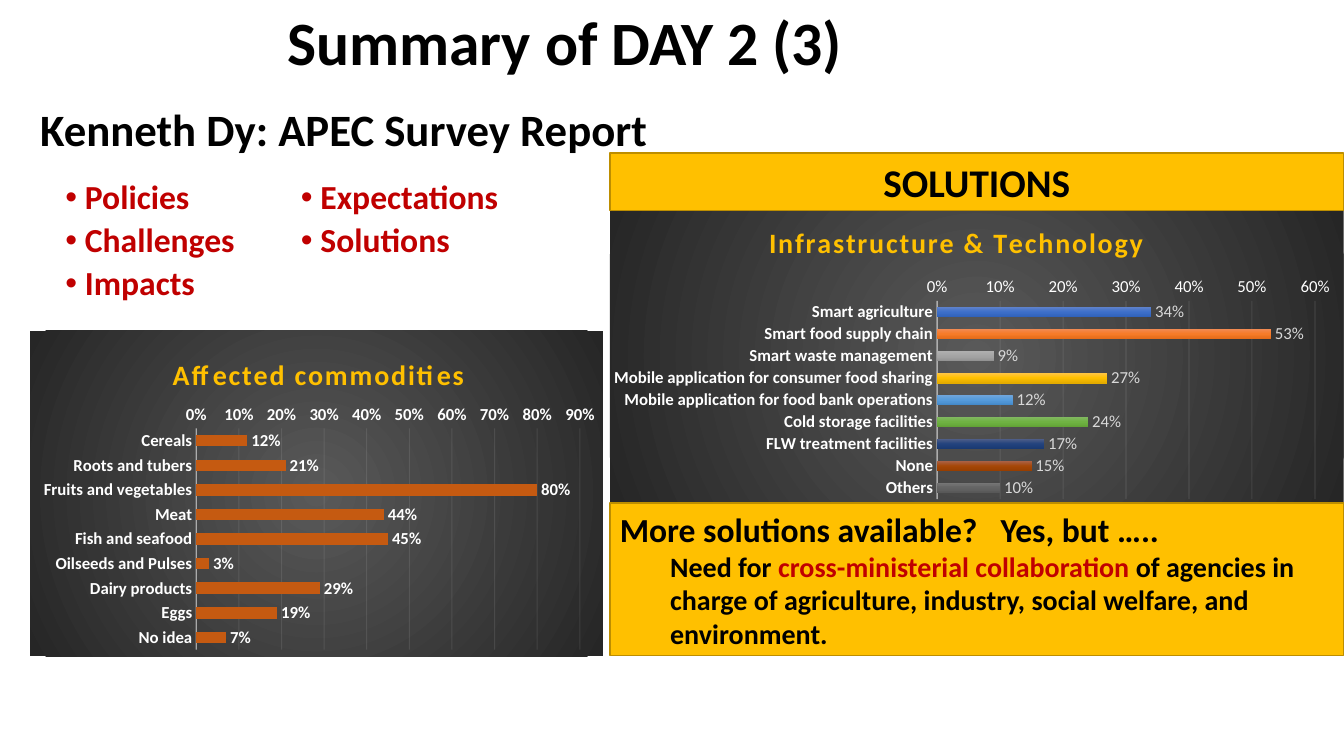
import pptx
import pptx.chart.data
import pptx.dml.color
import pptx.enum.chart
import pptx.enum.shapes
import pptx.enum.text
import pptx.oxml
import pptx.oxml.ns
import pptx.util

Pt = pptx.util.Pt
RGB = pptx.dml.color.RGBColor
PP_ALIGN = pptx.enum.text.PP_ALIGN
ANCHOR = pptx.enum.text.MSO_ANCHOR
qn = pptx.oxml.ns.qn

BLACK, WHITE = RGB(0, 0, 0), RGB(255, 255, 255)
RED, AMBER = RGB(0xC0, 0, 0), RGB(0xFF, 0xC0, 0)
AMBER_EDGE, ORANGE = RGB(0xBD, 0x8E, 0), RGB(0xC5, 0x5A, 0x11)
AXIS_GREY, LABEL_GREY = RGB(0xF2, 0xF2, 0xF2), RGB(0xD9, 0xD9, 0xD9)
FONT = "Calibri"

# Content
TITLE = "Summary of DAY 2 (3)"
SUBTITLE = "Kenneth Dy: APEC Survey Report"
TOPICS = ["Policies", "Challenges", "Impacts", "Expectations", "Solutions"]
SOLUTIONS = "SOLUTIONS"
QUESTION = "More solutions available?\tYes, but ….."
NEED = [("Need for ", BLACK), ("cross-ministerial collaboration ", RED),
        ("of agencies in charge of agriculture, industry, social welfare, "
         "and environment.", BLACK)]

COMMODITIES = {
    "title": "Affected commodities",
    "values": {"Cereals": 0.12, "Roots and tubers": 0.21, "Fruits and vegetables": 0.8,
               "Meat": 0.44, "Fish and seafood": 0.45, "Oilseeds and Pulses": 0.03,
               "Dairy products": 0.29, "Eggs": 0.19, "No idea": 0.07},
    "max": 0.9, "bold": True, "label": WHITE, "bars": [],
    "box": (21.6, 236.2, 409, 232.6),
    "title_at": (0.24, 0.06), "plot": (0.29, 0.3, 0.67, 0.68),
}
TECHNOLOGY = {
    "title": "Infrastructure & Technology",
    "values": {"Smart agriculture": 0.34, "Smart food supply chain": 0.53,
               "Smart waste management": 0.09,
               "Mobile application for consumer food sharing": 0.27,
               "Mobile application for food bank operations": 0.12,
               "Cold storage facilities": 0.24, "FLW treatment facilities": 0.17,
               "None": 0.15, "Others": 0.1},
    "max": 0.6, "bold": False, "label": LABEL_GREY,
    "bars": ["6183CB 3E70CA 3062BB", "F18C57 F67B28 E56C19", "AFAFAF A5A5A5 939393",
             "FFC64B FFC000 E3AB00", "71A6DB 559BDB 448ACA", "81B861 6FB242 62A336",
             "516089 22427D 1A3A72", "AB634B A54707 983E00", "777777 636363 585858"],
    "box": (435.6, 146.9, 524.2, 214.6),
    "title_at": (0.21, 0.04), "plot": (0.446, 0.317, 0.515, 0.66),
}


def style(font, size, color, bold=True):
    font.name, font.size, font.bold = FONT, Pt(size), bold
    font.color.rgb = color


def box(*lengths):
    return [Pt(length) for length in lengths]


def xml(tag, inner="", attrs=""):
    return pptx.oxml.parse_xml(
        f'<{tag} {pptx.oxml.ns.nsdecls("a", "c")} {attrs}>{inner}</{tag}>')


def gradient(colors, direction):
    step = 100000 // (len(colors) - 1)
    stops = "".join(f'<a:gs pos="{i * step}"><a:srgbClr val="{color}"/></a:gs>'
                    for i, color in enumerate(colors))
    return xml("a:gradFill", f"<a:gsLst>{stops}</a:gsLst>{direction}", 'rotWithShape="1"')


def layout(target, **fractions):
    modes = "".join(f'<c:{k}Mode val="edge"/>' for k in fractions if k in "xy")
    sizes = "".join(f'<c:{k} val="{v}"/>' for k, v in fractions.items())
    return xml("c:layout", f"<c:manualLayout>{target}{modes}{sizes}</c:manualLayout>")


def set_layout(parent, new, before=None):
    for old in parent.findall(qn("c:layout")):
        parent.remove(old)
    if before is None:
        parent.insert(0, new)
    else:
        before.addnext(new)


def faint_line(line, width, opacity):
    line.width = Pt(width)
    line.color.rgb = AXIS_GREY
    color = line._ln.find(".//" + qn("a:srgbClr"))
    color.append(xml("a:alpha", attrs=f'val="{opacity * 1000}"'))


def add_bar_chart(slide, info):
    data = pptx.chart.data.CategoryChartData(number_format="0%")
    data.categories = list(info["values"])
    data.add_series("Series 1", list(info["values"].values()))
    chart = slide.shapes.add_chart(pptx.enum.chart.XL_CHART_TYPE.BAR_CLUSTERED,
                                   *box(*info["box"]), data).chart
    style(chart.font, 10, WHITE, info["bold"])
    chart.has_legend = False

    # Dark background
    background = xml("c:spPr")
    background.append(gradient(["595959", "262626"],
                               '<a:path path="circle"><a:fillToRect l="50000" t="50000" '
                               'r="50000" b="50000"/></a:path>'))
    background.append(xml("a:ln", "<a:noFill/>"))
    chart._chartSpace.find(qn("c:chart")).addnext(background)

    # Chart title
    heading = chart.chart_title
    heading.text_frame.text = info["title"]
    run = heading.text_frame.paragraphs[0].runs[0]
    style(run.font, 20, AMBER)
    run._r.get_or_add_rPr().set("spc", "120")
    x, y = info["title_at"]
    set_layout(heading._element, layout("", x=x, y=y), heading._element.find(qn("c:tx")))
    heading.include_in_layout = False
    x, y, w, h = info["plot"]
    set_layout(chart._chartSpace.find(".//" + qn("c:plotArea")),
               layout('<c:layoutTarget val="inner"/>', x=x, y=y, w=w, h=h))

    # Axes
    categories, percent = chart.category_axis, chart.value_axis
    for axis, bold in ((categories, True), (percent, info["bold"])):
        axis.major_tick_mark = axis.minor_tick_mark = pptx.enum.chart.XL_TICK_MARK.NONE
        style(axis.tick_labels.font, 12, WHITE, bold)
    categories.reverse_order = True
    faint_line(categories.format.line, 1, 54)
    percent.minimum_scale, percent.maximum_scale = 0, info["max"]
    percent.major_unit = 0.1
    percent.format.line.fill.background()
    percent.tick_labels.number_format = "0%"
    percent.tick_labels.number_format_is_linked = False
    faint_line(percent.major_gridlines.format.line, 0.75, 10)

    # Bars and their labels
    plot = chart.plots[0]
    plot.gap_width, plot.overlap, plot.vary_by_categories = 115, -20, False
    bars = plot.series[0]
    bars.invert_if_negative = False
    bars.format.fill.solid()
    bars.format.fill.fore_color.rgb = ORANGE
    for i, colors in enumerate(info["bars"]):
        point = bars._element.get_or_add_dPt_for_point(i)
        point.get_or_add_spPr().append(
            gradient(colors.split(), '<a:lin ang="5400000" scaled="0"/>'))
    plot.has_data_labels = True
    labels = plot.data_labels
    labels.show_value = True
    labels.number_format, labels.number_format_is_linked = "0%", False
    labels.position = pptx.enum.chart.XL_LABEL_POSITION.OUTSIDE_END
    style(labels.font, 12, info["label"], info["bold"])


def add_amber_panel(slide, top, height):
    panel = slide.shapes.add_shape(pptx.enum.shapes.MSO_SHAPE.RECTANGLE,
                                   *box(435.6, top, 524.2, height))
    panel.shadow.inherit = False
    panel.fill.solid()
    panel.fill.fore_color.rgb = AMBER
    panel.line.color.rgb = AMBER_EDGE
    panel.line.width = Pt(1)
    panel.text_frame.word_wrap = True
    panel.text_frame.vertical_anchor = ANCHOR.MIDDLE
    return panel.text_frame


deck = pptx.Presentation()
deck.slide_width, deck.slide_height = Pt(960), Pt(540)
slide = deck.slides.add_slide(deck.slide_layouts[5])

# Title and subtitle
title = slide.shapes.title
title.left, title.top, title.width, title.height = box(198, -18.7, 828, 102.2)
subtitle = slide.shapes.add_textbox(*box(21.6, 73.4, 828, 44.6))
for shape, text, size in ((title, TITLE, 44), (subtitle, SUBTITLE, 32)):
    shape.text_frame.text = text
    shape.text_frame.word_wrap = True
    line = shape.text_frame.paragraphs[0]
    line.alignment, line.line_spacing = PP_ALIGN.LEFT, 0.9
    style(line.runs[0].font, size, BLACK)
title.text_frame.vertical_anchor = ANCHOR.MIDDLE

# Charts
for info in (COMMODITIES, TECHNOLOGY):
    add_bar_chart(slide, info)

# Solutions heading and closing message
heading = add_amber_panel(slide, 109.4, 41)
heading.text = SOLUTIONS
heading.paragraphs[0].alignment = PP_ALIGN.CENTER
style(heading.paragraphs[0].runs[0].font, 28, BLACK)

message = add_amber_panel(slide, 359.3, 109)
message.text = QUESTION
question, need = message.paragraphs[0], message.add_paragraph()
question._p.get_or_add_pPr().append(
    xml("a:tabLst", f'<a:tab pos="{Pt(272)}" algn="l"/>'))
question.alignment = need.alignment = PP_ALIGN.LEFT
for run in question.runs:
    style(run.font, 24, BLACK)
need._p.get_or_add_pPr().set("marL", str(Pt(36)))
for text, color in NEED:
    run = need.add_run()
    run.text = text
    style(run.font, 20, color)

# Topics in two columns
topics = slide.shapes.add_textbox(*box(39.6, 125.3, 350.6, 98)).text_frame
topics.word_wrap = True
topics.auto_size = pptx.enum.text.MSO_AUTO_SIZE.NONE
topics._txBody.bodyPr.set("numCol", "2")
topics.text = "\n".join(TOPICS)
for i, topic in enumerate(topics.paragraphs):
    topic.line_spacing = 0.9
    topic.space_before = Pt(5 if i else 0)
    props = topic._p.get_or_add_pPr()
    props.set("marL", str(Pt(14)))
    props.set("indent", str(-Pt(14)))
    props.append(xml("a:buFont", attrs='typeface="Arial"'))
    props.append(xml("a:buChar", attrs='char="•"'))
    style(topic.runs[0].font, 24, RED)

deck.save("out.pptx")
